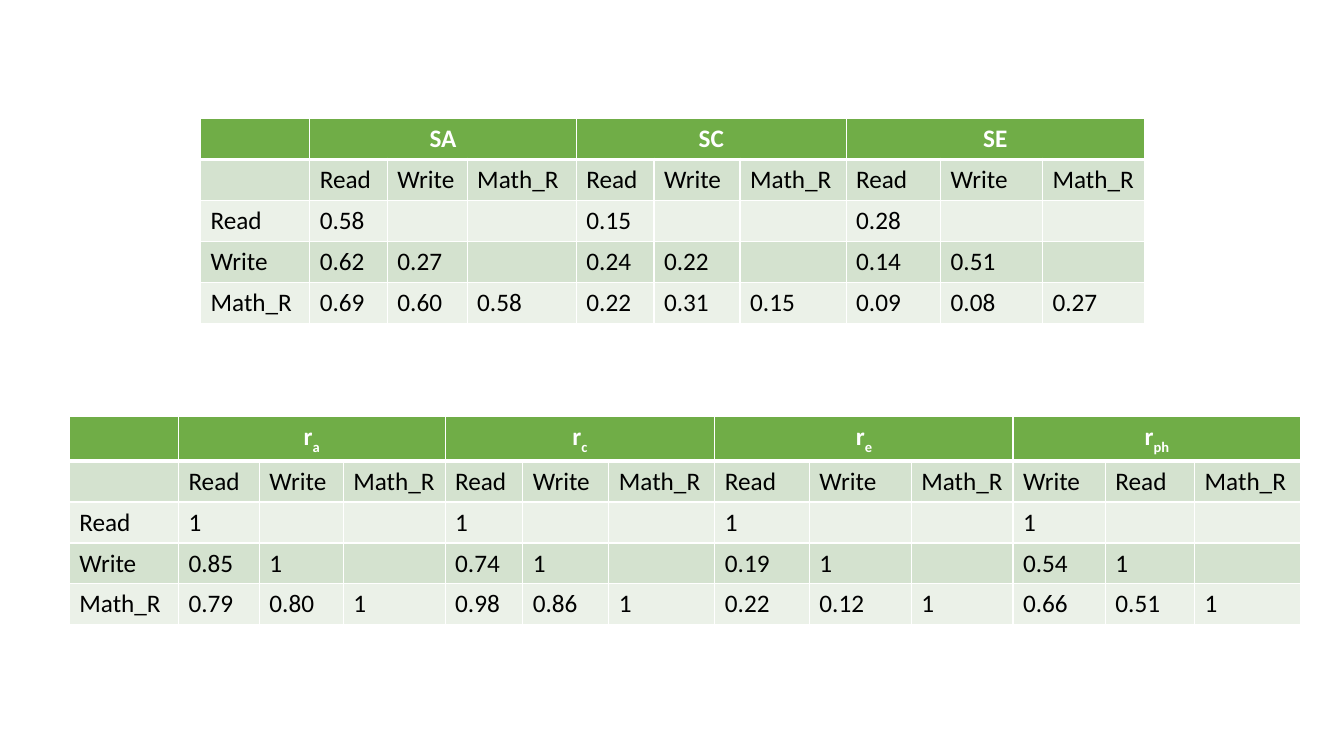
"""Build a slide with two tables of standardised components and correlations."""
from dataclasses import dataclass

from lxml import etree
from pptx import Presentation
from pptx.dml.color import RGBColor
from pptx.enum.text import PP_ALIGN
from pptx.oxml.ns import qn
from pptx.util import Pt

CENTER = PP_ALIGN.CENTER
LEFT = PP_ALIGN.LEFT
EMU_PER_PX = 9525
SLIDE_SIZE = (1280, 720)
ROW_HEIGHT = 39
LABEL_WIDTH = 104
GROUP_SIZE = 3
TRAITS = ("Read", "Write", "Math_R")
SWAPPED_TRAITS = ("Write", "Read", "Math_R")

TABLES = [
    {
        "left": 66,
        "top": 397,
        "groups": [
            (("r", "a"), TRAITS, (77, 80, 97), (("1",), ("0.85", "1"), ("0.79", "0.80", "1"))),
            (("r", "c"), TRAITS, (74, 82, 101), (("1",), ("0.74", "1"), ("0.98", "0.86", "1"))),
            (("r", "e"), TRAITS, (90, 97, 97), (("1",), ("0.19", "1"), ("0.22", "0.12", "1"))),
            (("r", "ph"), SWAPPED_TRAITS, (88, 85, 101), (("1",), ("0.54", "1"), ("0.66", "0.51", "1"))),
        ],
    },
    {
        "left": 191,
        "top": 113,
        "groups": [
            (("SA", ""), TRAITS, (74, 76, 104), (("0.58",), ("0.62", "0.27"), ("0.69", "0.60", "0.58"))),
            (("SC", ""), TRAITS, (74, 82, 101), (("0.15",), ("0.24", "0.22"), ("0.22", "0.31", "0.15"))),
            (("SE", ""), TRAITS, (90, 97, 97), (("0.28",), ("0.14", "0.51"), ("0.09", "0.08", "0.27"))),
        ],
    },
]


@dataclass(frozen=True)
class Theme:
    font: str = "Calibri"
    size: int = 18
    header: str = "70AD47"
    dark_band: str = "D4E2CF"
    light_band: str = "EBF1E8"
    white: str = "FFFFFF"
    black: str = "000000"
    thin: float = 0.96
    thick: float = 3


THEME = Theme()


def px(length):
    return length * EMU_PER_PX


def add_run(paragraph, text, color, bold=False, subscript=False):
    run = paragraph.add_run()
    run.text = text
    run.font.name = THEME.font
    run.font.size = Pt(THEME.size)
    run.font.bold = bold
    run.font.color.rgb = RGBColor.from_string(color)
    if subscript:
        run.font._element.set("baseline", "-25000")


def style_cell(cell, row):
    properties = cell._tc.get_or_add_tcPr()
    thick_side = {0: "lnB", 1: "lnT"}.get(row)
    for side in ("lnL", "lnR", "lnT", "lnB"):
        width = THEME.thick if side == thick_side else THEME.thin
        line = etree.SubElement(properties, qn(f"a:{side}"), w=str(int(Pt(width))))
        fill = etree.SubElement(line, qn("a:solidFill"))
        etree.SubElement(fill, qn("a:srgbClr"), val=THEME.white)
    band = THEME.dark_band if row % 2 else THEME.light_band
    cell.fill.solid()
    cell.fill.fore_color.rgb = RGBColor.from_string(band if row else THEME.header)


def add_group_title(table, column, title):
    cell = table.cell(0, column)
    cell.merge(table.cell(0, column + GROUP_SIZE - 1))
    paragraph = cell.text_frame.paragraphs[0]
    paragraph.alignment = CENTER
    base, subscript = title
    add_run(paragraph, base, THEME.white, bold=True)
    if subscript:
        add_run(paragraph, subscript, THEME.white, bold=True, subscript=True)


def fill_column(table, column, texts, first_row):
    for row, text in enumerate(texts, first_row):
        paragraph = table.cell(row, column).text_frame.paragraphs[0]
        paragraph.alignment = LEFT
        add_run(paragraph, text, THEME.black)


def add_trait_table(slide, left, top, groups):
    widths = [LABEL_WIDTH] + [width for group in groups for width in group[2]]
    row_count = len(TRAITS) + 2
    table = slide.shapes.add_table(
        row_count, len(widths), px(left), px(top), px(sum(widths)), px(ROW_HEIGHT * row_count)
    ).table
    for column, width in zip(table.columns, widths):
        column.width = px(width)
    for index, row in enumerate(table.rows):
        row.height = px(ROW_HEIGHT)
        for cell in row.cells:
            style_cell(cell, index)
    fill_column(table, 0, TRAITS, 2)
    for index, (title, heads, _, values) in enumerate(groups):
        start = 1 + index * GROUP_SIZE
        add_group_title(table, start, title)
        for offset, head in enumerate(heads):
            fill_column(table, start + offset, [head], 1)
            column_values = [line[offset] for line in values[offset:]]
            fill_column(table, start + offset, column_values, 2 + offset)


def main():
    presentation = Presentation()
    presentation.slide_width, presentation.slide_height = map(px, SLIDE_SIZE)
    slide = presentation.slides.add_slide(presentation.slide_layouts[6])
    for content in TABLES:
        add_trait_table(slide, **content)
    presentation.save("out.pptx")


if __name__ == "__main__":
    main()
